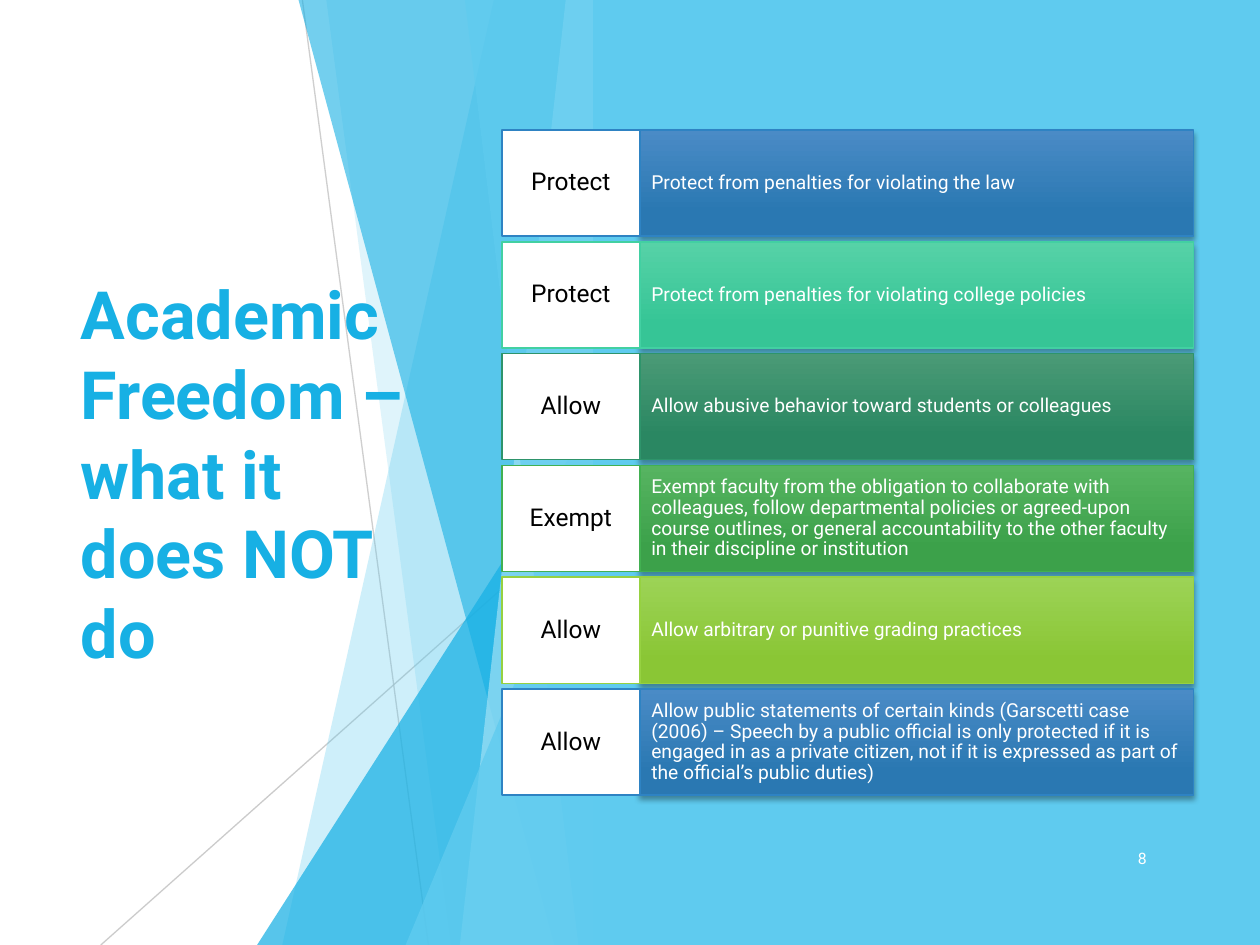
import pptx
import pptx.util
import pptx.dml.color
import pptx.enum.shapes
import pptx.enum.text
import pptx.oxml.ns
import lxml.etree

Pt = pptx.util.Pt
qn = pptx.oxml.ns.qn
SHAPE = pptx.enum.shapes.MSO_SHAPE
ALIGN = pptx.enum.text.PP_ALIGN
MIDDLE = pptx.enum.text.MSO_ANCHOR.MIDDLE


def rgb(color):
    return pptx.dml.color.RGBColor.from_string(color)


def set_opacity(sp, percent):
    for clr in sp.element.spPr.iter(qn("a:srgbClr")):
        lxml.etree.SubElement(clr, qn("a:alpha")).set("val", str(percent * 1000))


WIDTH, HEIGHT = 720, 540
PANEL_LEFT = 339

prs = pptx.Presentation()
prs.slide_width, prs.slide_height = Pt(WIDTH), Pt(HEIGHT)
s = prs.slides.add_slide(prs.slide_layouts[5])

for x1, y1, x2, y2, opacity in [(172.8, 0, 244.8, HEIGHT, 75), (PANEL_LEFT, 290, 57.6, HEIGHT, 80)]:
    line = s.shapes.add_connector(pptx.enum.shapes.MSO_CONNECTOR.STRAIGHT, Pt(x1), Pt(y1), Pt(x2), Pt(y2))
    line.line.color.rgb = rgb("BFBFBF")
    line.line.width = Pt(0.75)
    set_opacity(line, opacity)
    lxml.etree.SubElement(line.element.spPr, qn("a:effectLst"))

facets = [
    ("band", 282.2, 161.3, "5FCBEF", 30),
    ("band", 186.5, 257.8, "5FCBEF", 20),
    ("triangle", 146.9, 240, "17B0E4", 72),
    ("band", 170.6, 316.8, "17B0E4", 60),
    ("band", 323.3, 262.8, "9FE0F5", 70),
    ("band", 265.7, 330.5, "5FCBEF", 65),
    ("triangle", 231.8, 283, "5FCBEF", 80),
]
for kind, start, end, color, opacity in facets:
    if kind == "band":
        fb = s.shapes.build_freeform(Pt(start), 0)
        corners = [(PANEL_LEFT, 0), (PANEL_LEFT, HEIGHT), (end, HEIGHT)]
        fb.add_line_segments([(Pt(x), Pt(y)) for x, y in corners])
        sp = fb.convert_to_shape()
    else:
        sp = s.shapes.add_shape(SHAPE.ISOSCELES_TRIANGLE, Pt(start), Pt(end), Pt(PANEL_LEFT - start), Pt(HEIGHT - end))
        sp.adjustments[0] = 1
    sp.shadow.inherit = False
    sp.fill.solid()
    sp.fill.fore_color.rgb = rgb(color)
    sp.line.fill.background()
    set_opacity(sp, opacity)

title = s.shapes.title
title.element.getparent().append(title.element)
title.left, title.top, title.width, title.height = Pt(38.9), Pt(108.7), Pt(209.5), Pt(322.6)
tf = title.text_frame
tf.text = "Academic Freedom – what it does NOT do"
tf.word_wrap = True
tf.auto_size = pptx.enum.text.MSO_AUTO_SIZE.NONE
tf.vertical_anchor = MIDDLE
p = tf.paragraphs[0]
p.alignment = ALIGN.LEFT
p.font.name, p.font.size, p.font.bold = "Roboto", Pt(38), True
p.font.color.rgb = rgb("17B0E4")

panel = s.shapes.add_shape(SHAPE.RECTANGLE, Pt(PANEL_LEFT), 0, Pt(WIDTH - PANEL_LEFT), Pt(HEIGHT))
panel.shadow.inherit = False
panel.fill.solid()
panel.fill.fore_color.rgb = rgb("5FCBEF")
panel.line.fill.background()

number = s.shapes.add_textbox(Pt(622), Pt(476), Pt(40.3), Pt(28.8))
tf = number.text_frame
tf.text = "8"
tf.word_wrap = True
tf.vertical_anchor = MIDDLE
p = tf.paragraphs[0]
p.alignment = ALIGN.RIGHT
p.font.name, p.font.size = "Roboto", Pt(9)
p.font.color.rgb = rgb("FFFFFF")

blue = ("4A8BC6", "2A78B2", "2E83C3")
rows = [
    ("Protect", "Protect from penalties for violating the law", blue),
    ("Protect", "Protect from penalties for violating college policies", ("56D2A7", "36C596", "42D0A2")),
    ("Allow", "Allow abusive behavior toward students or colleagues", ("4A9A76", "2A8762", "2E946B")),
    ("Exempt", "Exempt faculty from the obligation to collaborate with colleagues, follow departmental "
     "policies or agreed-upon course outlines, or general accountability to the other faculty "
     "in their discipline or institution", ("56B461", "3CA14A", "42B051")),
    ("Allow", "Allow arbitrary or punitive grading practices", ("9CD356", "8AC635", "96D141")),
    ("Allow", "Allow public statements of certain kinds (Garscetti case (2006) – Speech by a public "
     "official is only protected if it is engaged in as a private citizen, not if it is expressed "
     "as part of the official’s public duties)", blue),
]
ROW_TOP, ROW_PITCH, ROW_HEIGHT = 74.2, 63.94, 60.6
LABEL_LEFT, LABEL_WIDTH, BODY_WIDTH = 286.7, 79, 316.4

for i, (label, body, (light, dark, border)) in enumerate(rows):
    cells = [
        (LABEL_LEFT + LABEL_WIDTH, BODY_WIDTH, body, 11, "FFFFFF", ALIGN.LEFT, 6.5),
        (LABEL_LEFT, LABEL_WIDTH, label, 14, "000000", ALIGN.CENTER, 4.3),
    ]
    for left, width, text, size, color, align, inset in cells:
        sp = s.shapes.add_shape(SHAPE.RECTANGLE, Pt(left), Pt(ROW_TOP + i * ROW_PITCH), Pt(width), Pt(ROW_HEIGHT))
        sp.line.color.rgb = rgb(border)
        sp.line.width = Pt(1)
        sp.shadow.inherit = False
        if text == body:
            sp.fill.gradient()
            sp.fill.gradient_angle = 270
            for stop, shade, position in zip(sp.fill.gradient_stops, (light, dark), (0, 0.78)):
                stop.color.rgb = rgb(shade)
                stop.position = position
            effects = sp.element.spPr.find(qn("a:effectLst"))
            shadow = lxml.etree.SubElement(effects, qn("a:outerShdw"), blurRad=str(Pt(3)), dist=str(Pt(2)),
                                           dir="5400000", rotWithShape="0")
            black = lxml.etree.SubElement(shadow, qn("a:srgbClr"), val="000000")
            lxml.etree.SubElement(black, qn("a:alpha"), val="35000")
        else:
            sp.fill.solid()
            sp.fill.fore_color.rgb = rgb("FFFFFF")
        tf = sp.text_frame
        tf.text = text
        tf.word_wrap = True
        tf.vertical_anchor = MIDDLE
        tf.margin_left = tf.margin_right = Pt(inset)
        tf.margin_top = tf.margin_bottom = Pt(4)
        p = tf.paragraphs[0]
        p.alignment = align
        p.line_spacing = 0.9
        p.font.name, p.font.size = "Roboto", Pt(size)
        p.font.color.rgb = rgb(color)

prs.save("out.pptx")
